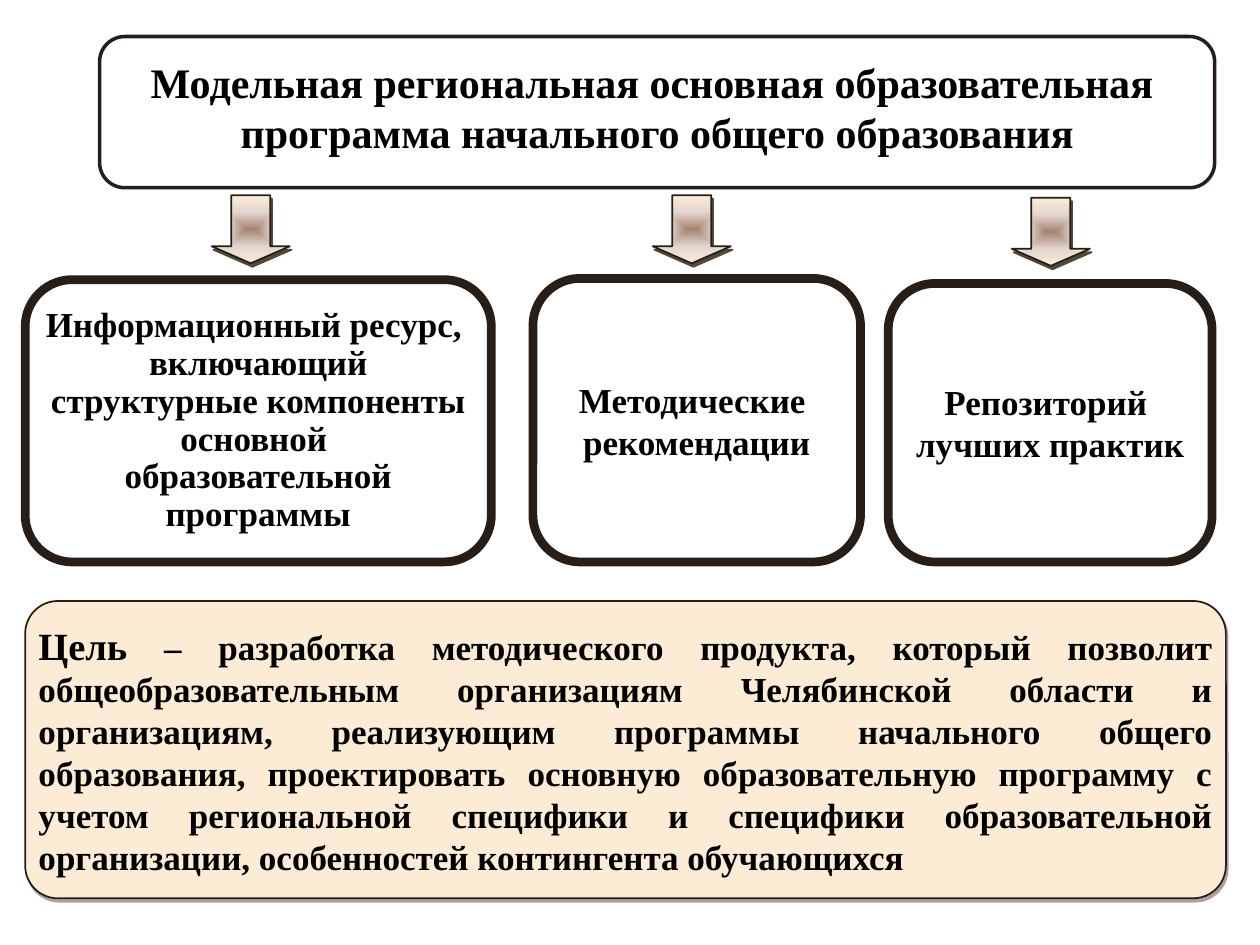
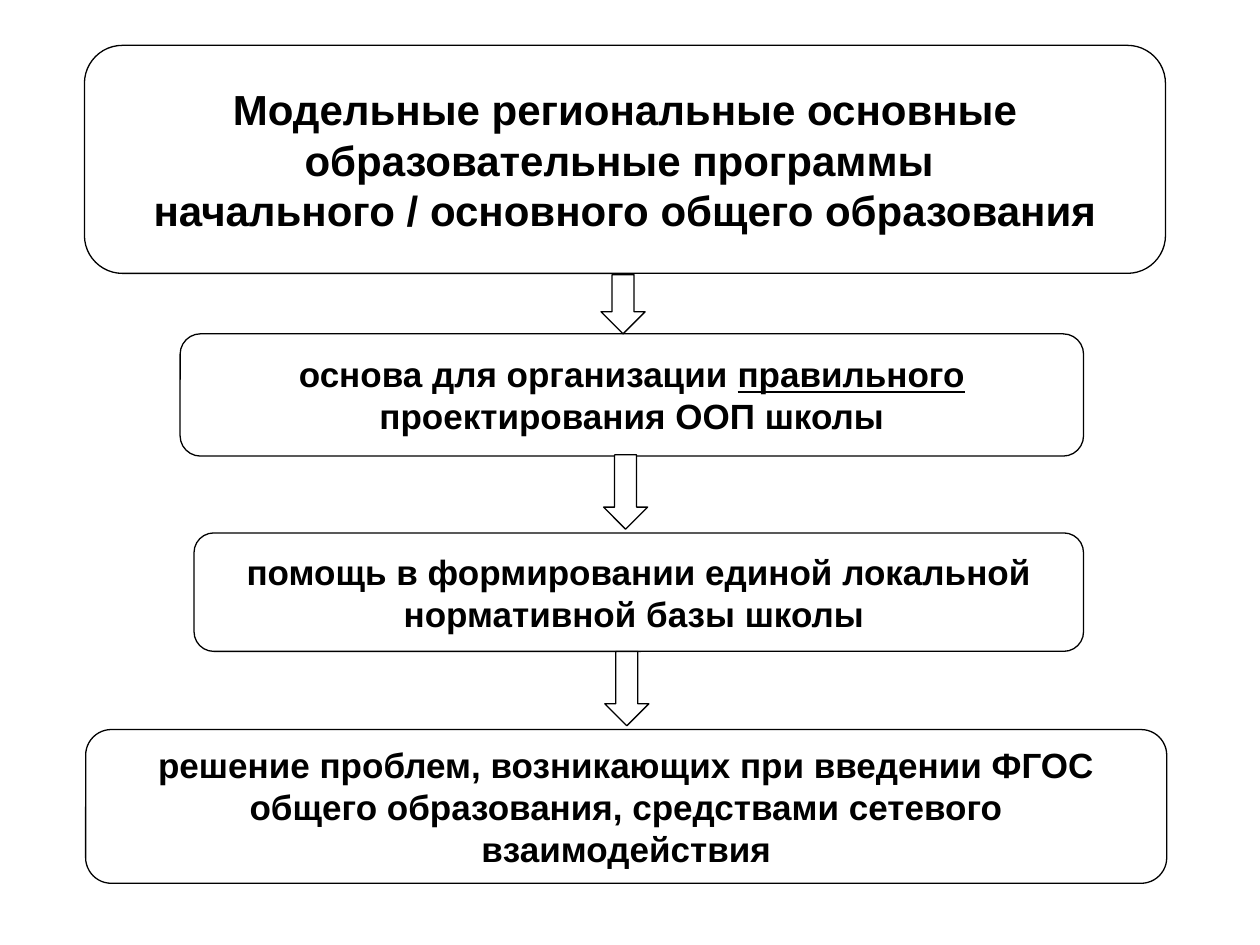
from pptx import Presentation
from pptx.dml.color import RGBColor
from pptx.enum.shapes import MSO_SHAPE as Kind
from pptx.enum.text import MSO_ANCHOR as Anchor, PP_ALIGN as Align
from pptx.oxml import parse_xml
from pptx.oxml.ns import nsdecls, qn
from pptx.util import Inches, Pt

WHITE, BLACK, BROWN, CREAM = "FFFFFF", "000000", "271E18", "FCECD5"
STOPS = [(0, "A78470"), (50, "E2D6CF"), (100, CREAM)]
SERIF, SANS = "Times New Roman", "Arial"


def color(code):
    return RGBColor.from_string(code)


def add_form(slide, kind, at, fill, line, width, adj=None):
    """Add a preset shape without shadow; at is left, top, width, height."""
    form = slide.shapes.add_shape(kind, *map(Inches, at))
    form.fill.solid()
    form.fill.fore_color.rgb = color(fill)
    form.line.color.rgb = color(line)
    form.line.width = Pt(width)
    form.shadow.inherit = False
    for i, value in enumerate(adj or []):
        form.adjustments[i] = value
    return form


def add_shade(form, tint, alpha):
    """Give the shape a short hard shadow to the lower right."""
    effects = form._element.spPr.find(qn("a:effectLst"))
    effects.append(parse_xml(
        f'<a:outerShdw {nsdecls("a")} dist="27940" dir="3780000" algn="ctr" '
        f'rotWithShape="0"><a:srgbClr val="{tint}">'
        f'<a:alpha val="{alpha * 1000}"/></a:srgbClr></a:outerShdw>'))


def add_glow(form):
    """Fill the shape with a gradient that spreads from its centre."""
    stops = "".join(
        f'<a:gs pos="{pos * 1000}"><a:srgbClr val="{tint}"/></a:gs>'
        for pos, tint in STOPS)
    props = form._element.spPr
    props.replace(props.find(qn("a:solidFill")), parse_xml(
        f'<a:gradFill {nsdecls("a")} rotWithShape="0"><a:gsLst>{stops}</a:gsLst>'
        '<a:path path="rect"><a:fillToRect l="50000" t="50000" r="50000" '
        'b="50000"/></a:path></a:gradFill>'))


def add_text(form, lines, size, font, align=Align.CENTER, anchor=Anchor.MIDDLE,
             pads=(0.1, 0.05), space=None):
    """Write lines of runs; a run is a text or a (text, font changes) pair."""
    frame = form.text_frame
    frame.word_wrap = True
    frame.vertical_anchor = anchor
    frame.margin_left = frame.margin_right = Inches(pads[0])
    frame.margin_top = frame.margin_bottom = Inches(pads[1])
    for i, line in enumerate(lines):
        para = frame.paragraphs[0] if i == 0 else frame.add_paragraph()
        para.alignment = align
        if space:
            para.line_spacing = space
        for part in line:
            text, extra = (part, {}) if isinstance(part, str) else part
            run = para.add_run()
            run.text = text
            run.font.name = font
            run.font.size = Pt(extra.get("size", size))
            run.font.bold = True
            run.font.underline = extra.get("under")
            run.font.color.rgb = color(BLACK)


def draw_parts(slide):
    head = add_form(slide, Kind.FLOWCHART_ALTERNATE_PROCESS,
                    (0.79, 0.29, 8.85, 1.2), WHITE, BROWN, 2)
    add_text(head, [["Модельная региональная основная образовательная "],
                    ["программа начального общего образования"]],
             24, SERIF, anchor=Anchor.TOP, pads=(0.1, 0.1))

    parts = [
        ((0.2, 2.22, 3.7, 2.24), 0.9,
         [["Информационный ресурс, "],
          ["включающий структурные компоненты основной "],
          ["образовательной программы"]]),
        ((4.23, 2.21, 2.6, 2.25), None,
         [["Методические "], ["рекомендации"]]),
        ((7.05, 2.25, 2.57, 2.21), None,
         [["Репозиторий "], ["лучших практик"]]),
    ]
    for at, space, lines in parts:
        part = add_form(slide, Kind.ROUNDED_RECTANGLE, at, WHITE, BROWN, 5)
        add_text(part, lines, 20, SERIF, pads=(0.03, 0.03), space=space)

    goal = add_form(slide, Kind.ROUNDED_RECTANGLE, (0.2, 4.77, 9.53, 2.36),
                    CREAM, BROWN, 1, [0.11])
    add_shade(goal, "614038", 50)
    add_text(goal, [[
        ("Цель", {"size": 22}),
        " – разработка методического продукта, который позволит "
        "общеобразовательным организациям Челябинской области и организациям, "
        "реализующим программы начального общего образования, проектировать "
        "основную образовательную программу с учетом региональной специфики и "
        "специфики образовательной организации, особенностей контингента "
        "обучающихся"]], 20, SERIF, align=Align.JUSTIFY, pads=(0.03, 0))

    for left, top in [(1.68, 1.55), (5.18, 1.55), (8.03, 1.57)]:
        arrow = add_form(slide, Kind.DOWN_ARROW, (left, top, 0.62, 0.54),
                         CREAM, BROWN, 1, [0.5, 0.25])
        add_glow(arrow)
        add_shade(arrow, "524A37", 100)


def draw_chain(slide):
    steps = [
        ((0.67, 0.36, 8.58, 1.81), 24,
         [["Модельные региональные основные образовательные программы "],
          ["начального / основного общего образования"]]),
        ((1.43, 2.65, 7.17, 0.97), 20,
         [["основа для организации ", ("правильного", {"under": True}),
           " проектирования ООП школы"]]),
        ((1.54, 4.23, 7.06, 0.94), 20,
         [["помощь в формировании единой локальной нормативной базы школы "]]),
        ((0.68, 5.79, 8.58, 1.22), 20,
         [["решение проблем, возникающих при введении ФГОС общего "
           "образования, средствами сетевого взаимодействия"]]),
    ]
    for at, size, lines in steps:
        step = add_form(slide, Kind.ROUNDED_RECTANGLE, at, WHITE, BLACK, 0.75)
        add_text(step, lines, size, SANS)
    for left, top, high in [(4.77, 2.18, 0.47), (4.79, 3.61, 0.59),
                            (4.8, 5.17, 0.59)]:
        add_form(slide, Kind.DOWN_ARROW, (left, top, 0.35, high),
                 WHITE, BLACK, 0.75)


def main():
    deck = Presentation()
    deck.slide_width, deck.slide_height = Inches(10), Inches(7.5)
    blank = deck.slide_layouts[6]
    for draw in (draw_parts, draw_chain):
        draw(deck.slides.add_slide(blank))
    deck.save("out.pptx")


if __name__ == "__main__":
    main()
